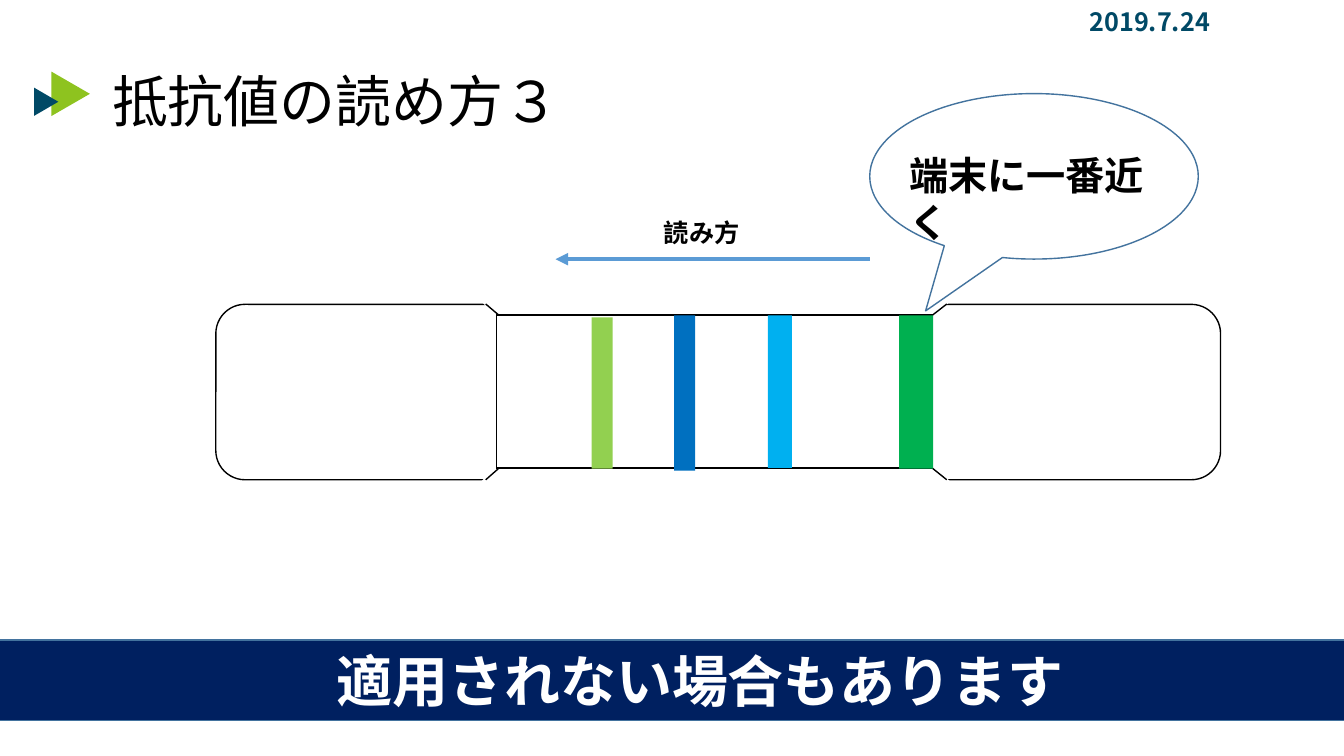
import pptx
import pptx.util
import pptx.dml.color
import pptx.enum.shapes
import pptx.enum.text
import pptx.oxml.ns
from dataclasses import dataclass
from pptx.util import Cm

SHAPE = pptx.enum.shapes.MSO_SHAPE
ALIGN = pptx.enum.text.PP_ALIGN
ANCHOR = pptx.enum.text.MSO_ANCHOR


@dataclass(frozen=True)
class Theme:
    black: str = "000000"
    white: str = "FFFFFF"
    teal: str = "004966"
    leaf: str = "8EC31F"
    navy: str = "002060"
    outline: str = "43739E"
    arrow: str = "5B9BD5"
    band_green: str = "00B050"
    band_sky: str = "00B0F0"
    band_blue: str = "0070C0"
    band_lime: str = "92D050"
    body_font: str = "Calibri"
    date_font: str = "Noto Sans CJK SC"
    banner_font: str = "Cabin"
    heading: int = 40
    callout: int = 28
    label: int = 18


def rgb(value):
    return pptx.dml.color.RGBColor.from_string(value)


def add_xml(parent, tag, **attributes):
    parent.append(parent.makeelement(pptx.oxml.ns.qn(tag), attributes))


class SlideBuilder:
    def __init__(self, slide, theme):
        self.slide = slide
        self.theme = theme
        self.target = slide.shapes

    def start_group(self):
        self.target = self.slide.shapes.add_group_shape().shapes

    def end_group(self):
        self.target = self.slide.shapes

    def shape(self, kind, box, fill=None, line=None, rotation=0, adjustments=()):
        shape = self.target.add_shape(kind, *map(Cm, box))
        shape.shadow.inherit = False
        shape.rotation = rotation
        for index, value in enumerate(adjustments):
            shape.adjustments[index] = value
        if fill:
            shape.fill.solid()
            shape.fill.fore_color.rgb = rgb(fill)
        else:
            shape.fill.background()
        if line:
            shape.line.color.rgb = rgb(line)
            shape.line.width = pptx.util.Pt(1)
        else:
            shape.line.fill.background()

    def line(self, start, end, color, width, arrow=False):
        connector = self.target.add_connector(
            pptx.enum.shapes.MSO_CONNECTOR.STRAIGHT, *map(Cm, start + end))
        connector.line.color.rgb = rgb(color)
        connector.line.width = pptx.util.Pt(width)
        properties = connector._element.spPr
        if arrow:
            add_xml(properties.get_or_add_ln(), "a:tailEnd", type="triangle")
        add_xml(properties, "a:effectLst")

    def set_text(self, shape, text, size, color, font, bold=True, wrap=True,
                 align=ALIGN.LEFT, anchor=ANCHOR.TOP, spacing=None):
        frame = shape.text_frame
        frame.text = text
        frame.word_wrap = wrap
        frame.auto_size = pptx.enum.text.MSO_AUTO_SIZE.NONE
        frame.vertical_anchor = anchor
        paragraph = frame.paragraphs[0]
        paragraph.alignment = align
        paragraph.line_spacing = spacing
        paragraph.font.size = pptx.util.Pt(size)
        paragraph.font.bold = bold
        paragraph.font.name = font
        paragraph.font.color.rgb = rgb(color)

    def text(self, box, text, size, color, font, **style):
        text_box = self.target.add_textbox(*map(Cm, box))
        self.set_text(text_box, text, size, color, font, **style)

    def title(self, box, text):
        title = self.slide.shapes.title
        title.left, title.top, title.width, title.height = map(Cm, box)
        self.set_text(title, text, self.theme.heading, self.theme.black,
                      self.theme.body_font, bold=False, anchor=ANCHOR.BOTTOM, spacing=0.9)


def main():
    presentation = pptx.Presentation()
    presentation.slide_width = Cm(33.87)
    presentation.slide_height = Cm(19.05)
    theme = Theme()
    builder = SlideBuilder(
        presentation.slides.add_slide(presentation.slide_layouts[5]), theme)

    # Heading with its marker, and the date
    builder.shape(SHAPE.ISOSCELES_TRIANGLE, (1.22, 1.88, 1.12, 0.97), theme.leaf, rotation=90)
    builder.shape(SHAPE.ISOSCELES_TRIANGLE, (0.81, 2.26, 0.71, 0.61), theme.teal, rotation=90)
    builder.title((2.57, 1.17, 18.26, 2.36), "抵抗値の読め方３")
    builder.text((24.1, 0.13, 9.75, 1.04), "2019.7.24", theme.label, theme.teal,
                 theme.date_font, align=ALIGN.CENTER, spacing=0.9)

    # Resistor body, narrowed at the middle by two white notches
    builder.start_group()
    builder.shape(SHAPE.ROUNDED_RECTANGLE, (5.44, 7.67, 25.32, 4.42), theme.white, theme.black)
    for top, rotation in ((11.81, 0), (7.26, 180)):
        builder.shape(SHAPE.SNIP_2_SAME_RECTANGLE, (12.14, top, 11.79, 0.66), theme.white,
                      rotation=rotation, adjustments=(0.473, 0))
    for outer, inner in ((7.66, 7.94), (12.09, 11.8)):
        builder.line((12.24, outer), (12.57, inner), theme.black, 1)
        builder.line((12.5, inner), (23.5, inner), theme.black, 1.5)
        builder.line((23.86, outer), (23.5, inner), theme.black, 1)

    # Colour bands
    for left, top, width, height, color in (
            (22.66, 7.95, 0.86, 3.86, theme.band_green),
            (19.35, 7.95, 0.61, 3.84, theme.band_sky),
            (16.99, 7.95, 0.53, 3.91, theme.band_blue),
            (14.91, 8.0, 0.53, 3.81, theme.band_lime)):
        builder.shape(SHAPE.RECTANGLE, (left, top, width, height), color)
    builder.end_group()

    # Callout on the first band
    builder.shape(SHAPE.OVAL_CALLOUT, (21.92, 2.36, 8.28, 4.17), line=theme.outline,
                  adjustments=(-0.33, 0.813))
    builder.text((22.66, 3.68, 7.06, 1.45), "端末に一番近く", theme.callout, theme.black,
                 theme.body_font)

    # Reading direction
    builder.line((21.92, 6.53), (14.0, 6.53), theme.arrow, 3, arrow=True)
    builder.text((16.48, 5.36, 2.44, 1.02), "読み方", theme.label, theme.black,
                 theme.body_font, wrap=False)

    # Closing banner
    builder.shape(SHAPE.RECTANGLE, (-1.83, 16.13, 37.95, 2.03), theme.navy, theme.outline)
    builder.text((8.23, 15.77, 22.25, 2.36), "適用されない場合もあります", theme.heading,
                 theme.white, theme.banner_font, anchor=ANCHOR.BOTTOM, spacing=0.9)

    # Left edge of the middle section
    builder.line((12.52, 7.92), (12.52, 11.81), theme.black, 0.5)

    presentation.save("out.pptx")


if __name__ == "__main__":
    main()
